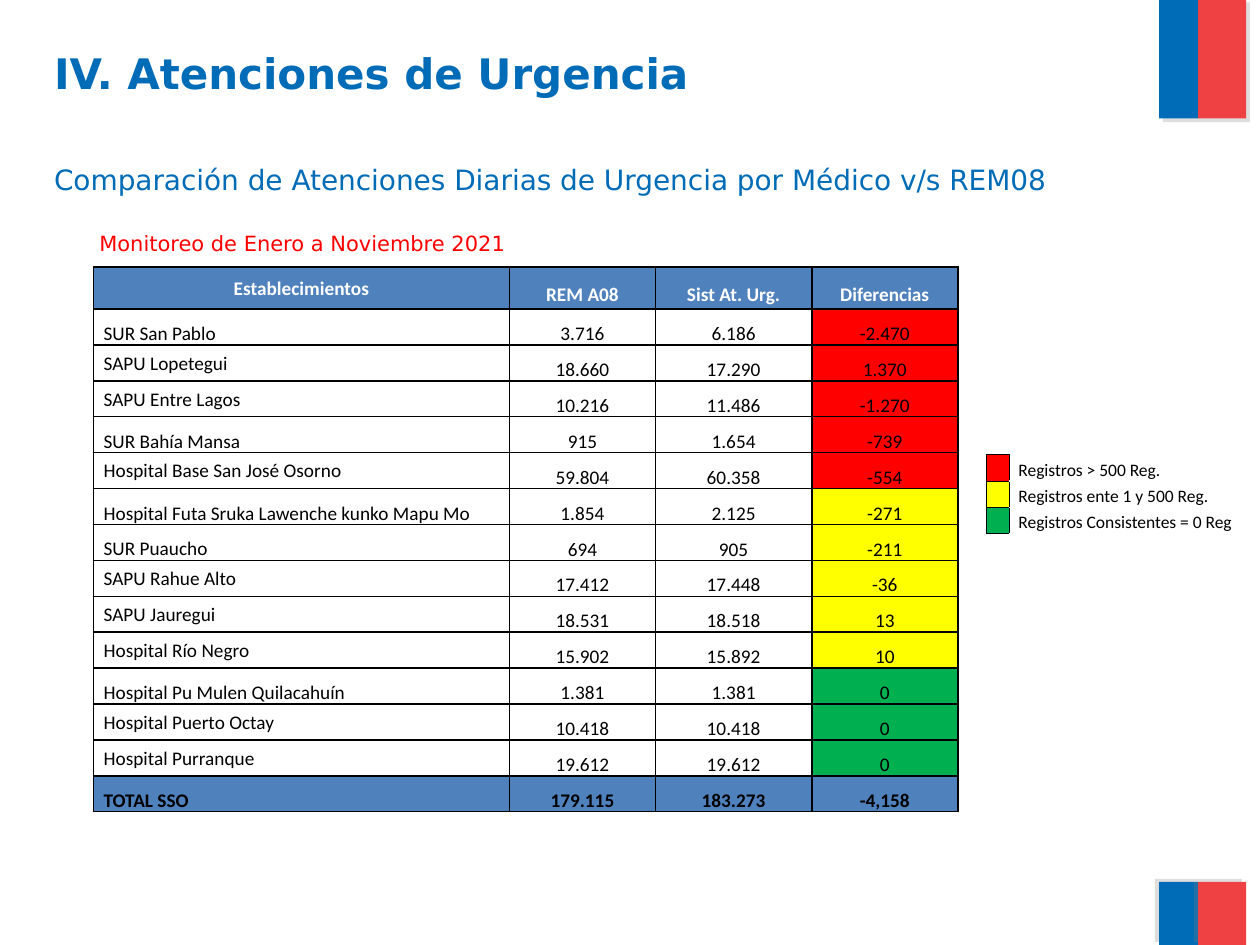
from lxml.etree import SubElement
from pptx import Presentation
from pptx.dml.color import RGBColor
from pptx.enum.shapes import MSO_SHAPE
from pptx.enum.text import MSO_ANCHOR, PP_ALIGN
from pptx.oxml import parse_xml
from pptx.oxml.ns import nsdecls, qn
from pptx.util import Pt

# Content
HEADINGS = [  # text, left, top, height, style
    ("IV. Atenciones de Urgencia", 23.8, 23.8, 41.8, "title"),
    ("Comparación de Atenciones Diarias de Urgencia por Médico v/s REM08",
     23.8, 89.3, 34.6, "subtitle"),
    ("Monitoreo de Enero a Noviembre 2021", 49.7, 128.2, 20.2, "period"),
]
HEADER = ("Establecimientos", "REM A08", "Sist At. Urg.", "Diferencias")
CENTERS = [
    ("SUR San Pablo", "3.716", "6.186", "-2.470"),
    ("SAPU Lopetegui", "18.660", "17.290", "1.370"),
    ("SAPU Entre Lagos", "10.216", "11.486", "-1.270"),
    ("SUR Bahía Mansa", "915", "1.654", "-739"),
    ("Hospital Base San José Osorno", "59.804", "60.358", "-554"),
    ("Hospital Futa Sruka Lawenche kunko Mapu Mo", "1.854", "2.125", "-271"),
    ("SUR Puaucho", "694", "905", "-211"),
    ("SAPU Rahue Alto", "17.412", "17.448", "-36"),
    ("SAPU Jauregui", "18.531", "18.518", "13"),
    ("Hospital Río Negro", "15.902", "15.892", "10"),
    ("Hospital Pu Mulen Quilacahuín", "1.381", "1.381", "0"),
    ("Hospital Puerto Octay", "10.418", "10.418", "0"),
    ("Hospital Purranque", "19.612", "19.612", "0"),
]
TOTAL = ("TOTAL SSO", "179.115", "183.273", "-4,158")
LOW_NAMES = ("SUR", "Hospital Futa", "Hospital Pu ", "TOTAL")  # set at the cell bottom
LEGEND = [("Registros > 500 Reg.", "high"),
          ("Registros ente 1 y 500 Reg.", "low"),
          ("Registros Consistentes = 0 Reg", "none")]
BANDS = [(-0.7, 68.4, 45), (504, 36, 215)]  # top, height, shadow angle
BAND_COLUMNS = [(662.4, 22.3, "blue"), (684.7, 27.4, "coral")]  # left, width, fill

THEME = {
    "colors": {"blue": "006CB7", "coral": "EF4144", "head": "4F81BD", "white": "FFFFFF",
               "black": "000000", "high": "FF0000", "low": "FFFF00", "none": "00B050"},
    "styles": {
        "title": {"name": "DejaVu Sans", "size": Pt(24), "bold": True, "color": "blue"},
        "subtitle": {"name": "DejaVu Sans", "size": Pt(16), "bold": False, "color": "blue"},
        "period": {"name": "DejaVu Sans", "size": Pt(12), "bold": False, "color": "high"},
        "head": {"name": "Calibri", "size": Pt(11), "bold": True, "color": "white"},
        "body": {"name": "Calibri", "size": Pt(11), "bold": False, "color": "black"},
        "total": {"name": "Calibri", "size": Pt(11), "bold": True, "color": "black"},
        "legend": {"name": "Calibri", "size": Pt(10), "bold": False, "color": "black"},
    },
}


def rgb(name):
    return RGBColor.from_string(THEME["colors"][name])


def write(p, text, style):
    r = p.add_run()
    r.text = text
    for key, value in THEME["styles"][style].items():
        if key == "color":
            r.font.color.rgb = rgb(value)
        else:
            setattr(r.font, key, value)


def add_shadow(sp, angle):
    sp.shadow.inherit = False
    effects = sp._element.spPr.find(qn("a:effectLst"))
    effects.append(parse_xml(
        f'<a:outerShdw {nsdecls("a")} blurRad="0" dist="{Pt(3)}" dir="{angle * 60000}" '
        'algn="tl" rotWithShape="0"><a:srgbClr val="808080"><a:alpha val="25000"/>'
        '</a:srgbClr></a:outerShdw>'))


def add_borders(cell, widths):
    tc_pr = cell._tc.get_or_add_tcPr()
    sides = [side for side in "LRTB" if side in widths]
    for i, side in enumerate(sides):
        tc_pr.insert(i, parse_xml(
            f'<a:ln{side} {nsdecls("a")} w="{Pt(widths[side])}"><a:solidFill>'
            f'<a:srgbClr val="{THEME["colors"]["black"]}"/></a:solidFill></a:ln{side}>'))


def format_cell(cell, fill, left=0.7, anchor=MSO_ANCHOR.MIDDLE):
    margins = {"margin_left": Pt(left), "margin_right": Pt(0.7), "margin_top": Pt(0.7),
               "margin_bottom": 0, "vertical_anchor": anchor}
    for key, value in margins.items():
        setattr(cell, key, value)
    if fill:
        cell.fill.solid()
        cell.fill.fore_color.rgb = rgb(fill)
    else:
        cell.fill.background()
    return cell.text_frame.paragraphs[0]


def add_grid(s, left, top, widths, heights):
    frame = s.shapes.add_table(len(heights), len(widths), Pt(left), Pt(top),
                               Pt(sum(widths)), Pt(sum(heights)))
    table = frame.table
    table.first_row = table.horz_banding = False
    for column, width in zip(table.columns, widths):
        column.width = Pt(width)
    for row, height in zip(table.rows, heights):
        row.height = Pt(height)
    return table


def difference_level(text):
    size = abs(int(text.replace(".", "")))
    return "high" if size > 500 else "low" if size else "none"


prs = Presentation()
prs.slide_width, prs.slide_height = Pt(720), Pt(540)
s = prs.slides.add_slide(prs.slide_layouts[6])

# Two-colour bands in the right corners
for top, height, angle in BANDS:
    for left, width, fill in BAND_COLUMNS:
        sp = s.shapes.add_shape(MSO_SHAPE.RECTANGLE, Pt(left), Pt(top), Pt(width), Pt(height))
        sp.fill.solid()
        sp.fill.fore_color.rgb = rgb(fill)
        sp.line.fill.background()
        add_shadow(sp, angle)

# Headings
for text, left, top, height, style in HEADINGS:
    tf = s.shapes.add_textbox(Pt(left), Pt(top), Pt(643), Pt(height)).text_frame
    tf.word_wrap = True
    write(tf.paragraphs[0], text, style)

# Comparison table
rows = [HEADER, *CENTERS, TOTAL]
last = len(rows) - 1
table = add_grid(s, 53.5, 152.6, [237.6, 83.5, 89.3, 83.5], [24] + [19.2] * last)
for i, row in enumerate(rows):
    style = "head" if i == 0 else "total" if i == last else "body"
    for j, text in enumerate(row):
        fill = "head" if style != "body" else difference_level(text) if j == 3 else "white"
        is_name = j == 0 and i > 0
        low = is_name and text.startswith(LOW_NAMES)
        cell = table.cell(i, j)
        p = format_cell(cell, fill, 5.7 if is_name else 0.7,
                        MSO_ANCHOR.BOTTOM if low else MSO_ANCHOR.MIDDLE)
        p.alignment = PP_ALIGN.LEFT if is_name else PP_ALIGN.CENTER
        if j > 0 or low:
            p.line_spacing = 1.5
        write(p, text, style)
        thin = style != "body"
        add_borders(cell, {"L": 0.5 if thin and j == 2 else 1,
                           "R": 0.5 if thin and j == 1 else 1,
                           "T": 1, "B": 0.5 if i == last else 1})

# Colour legend
legend = add_grid(s, 563.8, 259.9, [13, 162], [15] * len(LEGEND))
for i, (text, level) in enumerate(LEGEND):
    key, label = legend.cell(i, 0), legend.cell(i, 1)
    p = format_cell(key, level)
    SubElement(p._p, qn("a:endParaRPr"), sz="1000")
    add_borders(key, dict.fromkeys("LRTB", 0.5))
    write(format_cell(label, None, 5.2, MSO_ANCHOR.BOTTOM), text, "legend")
    add_borders(label, {"L": 0.5})

prs.save("out.pptx")
